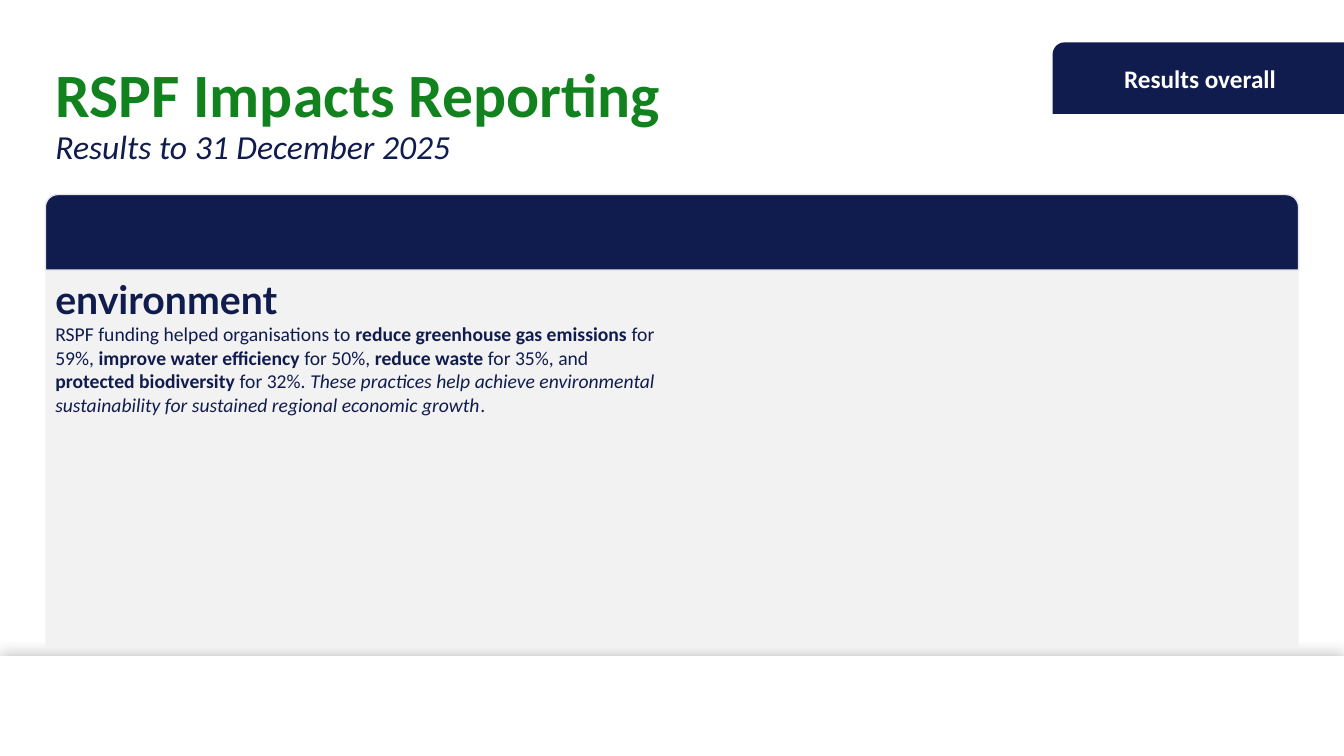
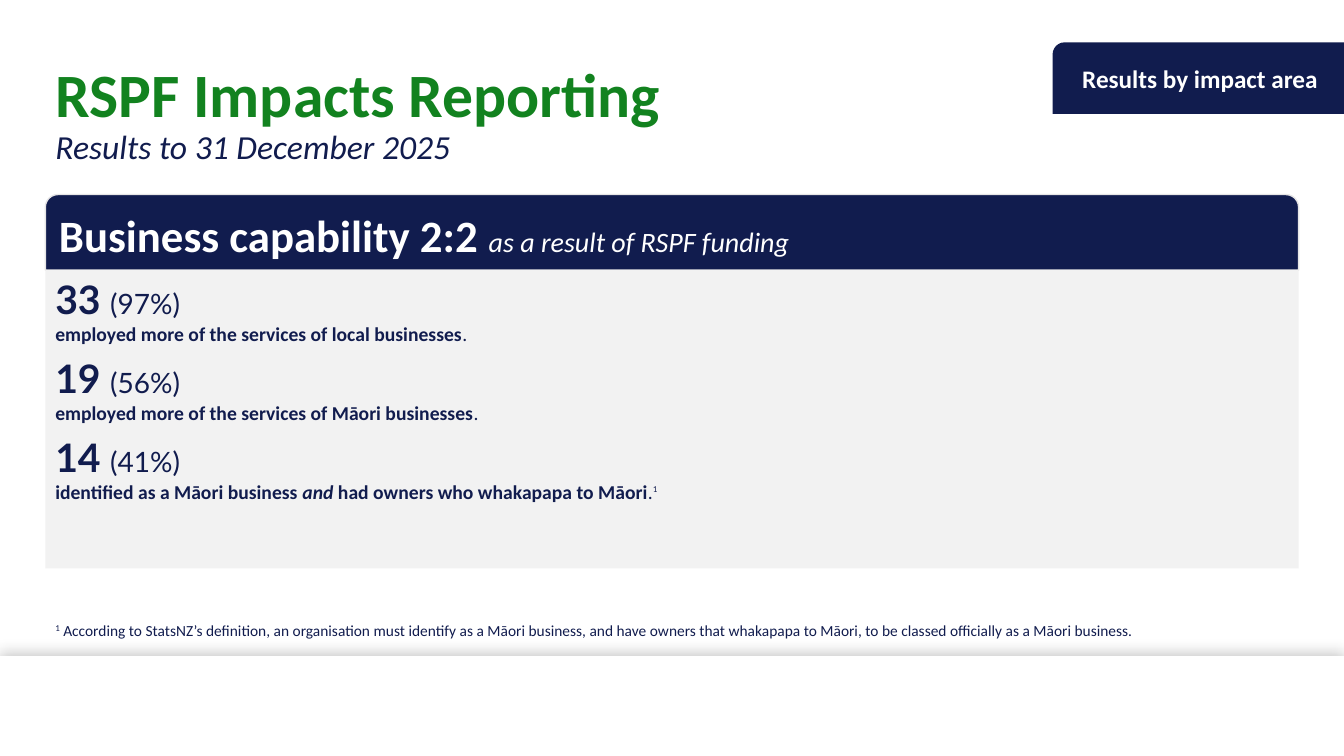
from lxml.etree import SubElement
from pptx import Presentation
from pptx.dml.color import RGBColor
from pptx.enum.shapes import MSO_SHAPE as SHAPE
from pptx.enum.text import MSO_ANCHOR as ANCHOR, MSO_AUTO_SIZE as AUTO_SIZE, PP_ALIGN as ALIGN
from pptx.oxml.ns import qn
from pptx.util import Inches, Pt

COLORS = {"navy": "111C4E", "green": "12821F", "panel": "F2F2F2",
          "edge": "E7E6E6", "white": "FFFFFF", "shadow": "000000"}
BODY_FONT, NUMBER_FONT = "Calibri", "Lato"

SLIDE_W, SLIDE_H = 13.33, 7.5
MARGIN = 0.45
CONTENT_W = SLIDE_W - 2 * MARGIN
COLUMN_W = CONTENT_W / 2
TOP = 0.42
TITLE_H = 1.45
TAB_W, TAB_H = 2.89, 0.71
HEADER_TOP, HEADER_H = 1.93, 0.75
PANEL_TOP = HEADER_TOP + HEADER_H
BAND_TOP = 6.51

BOLD = {"bold": True}
ITALIC = {"italic": True}
HEADING = {"size": 28, "font": NUMBER_FONT, "bold": True}
SHARE = {"size": 20, "font": NUMBER_FONT}


def rgb(name):
    return RGBColor.from_string(COLORS[name])


def place(shape, left, top, width, height):
    shape.left, shape.top = Inches(left), Inches(top)
    shape.width, shape.height = Inches(width), Inches(height)


def add_run(paragraph, text, size=14, font=BODY_FONT, color="navy",
            bold=False, italic=False, baseline=0):
    """Add one run; baseline is its rise in percent."""
    run = paragraph.add_run()
    run.text = text
    run.font.size, run.font.name = Pt(size), font
    run.font.bold, run.font.italic = bold, italic
    run.font.color.rgb = rgb(color)
    if baseline:
        run.font.language_id = None
        run._r.get_or_add_rPr().set("baseline", str(baseline * 1000))


def write(shape, paragraphs, anchor=ANCHOR.MIDDLE, align=ALIGN.LEFT,
          line_spacing=None, space_after=(), **base):
    """Fill a shape with paragraphs, each a list of (text, format) runs."""
    frame = shape.text_frame
    frame.word_wrap = True
    frame.vertical_anchor = anchor
    for index, runs in enumerate(paragraphs):
        paragraph = frame.add_paragraph() if index else frame.paragraphs[0]
        paragraph.alignment = align
        if line_spacing:
            paragraph.line_spacing = line_spacing
        if space_after:
            paragraph.space_after = Pt(space_after[index % len(space_after)])
        for text, style in runs:
            if text == "\n":
                paragraph.add_line_break()
            else:
                add_run(paragraph, text, **{**base, **style})


def add_block(slide, kind, left, top, width, height, fill, line=None):
    block = slide.shapes.add_shape(kind, Inches(left), Inches(top),
                                   Inches(width), Inches(height))
    block.shadow.inherit = False
    block.fill.solid()
    block.fill.fore_color.rgb = rgb(fill)
    if line:
        block.line.color.rgb = rgb(line)
        block.line.width = Pt(1)
    else:
        block.line.fill.background()
    return block


def add_footer_band(slide):
    """Draw the shadowed band and move it to the layout that all slides share."""
    band = add_block(slide, SHAPE.RECTANGLE, 0, BAND_TOP, SLIDE_W,
                     SLIDE_H - BAND_TOP, "white")
    effects = band.element.spPr.find(qn("a:effectLst"))
    shadow = SubElement(effects, qn("a:outerShdw"), blurRad=str(Pt(10)),
                        dist=str(Pt(3)), dir=str(270 * 60000), rotWithShape="0")
    color = SubElement(shadow, qn("a:srgbClr"), val=COLORS["shadow"])
    SubElement(color, qn("a:alpha"), val="20000")
    slide.slide_layout.shapes.element.append(band.element)


def add_title(slide, width):
    title = slide.shapes.title
    place(title, MARGIN, TOP, width, TITLE_H)
    title.text_frame.auto_size = AUTO_SIZE.NONE
    write(title, [[("RSPF Impacts Reporting", {"size": 44, "color": "green", **BOLD}),
                   ("\n", {}),
                   ("Results to 31 December 2025", {"size": 24, **ITALIC})]],
          line_spacing=0.9)


def add_tab(slide, label):
    tab = add_block(slide, SHAPE.ROUND_1_RECTANGLE, SLIDE_W - TAB_W, TOP,
                    TAB_W, TAB_H, "navy")
    tab.element.spPr.find(qn("a:xfrm")).set("flipH", "1")
    write(tab, [[(label, BOLD)]], align=ALIGN.CENTER, size=18, color="white")


def add_header(slide, *runs):
    header = add_block(slide, SHAPE.ROUND_2_SAME_RECTANGLE, MARGIN, HEADER_TOP,
                       CONTENT_W, HEADER_H, "navy", line="edge")
    if runs:
        write(header, [runs], color="white")


def add_panel(slide, left, width, height, paragraphs=(), **style):
    panel = add_block(slide, SHAPE.RECTANGLE, left, PANEL_TOP, width, height, "panel")
    if paragraphs:
        write(panel, paragraphs, anchor=ANCHOR.TOP, **style)


def add_footnote(slide, mark, text):
    note = slide.shapes.add_textbox(Inches(MARGIN), Inches(6.11),
                                    Inches(CONTENT_W), Inches(0.29))
    note.text_frame.auto_size = AUTO_SIZE.SHAPE_TO_FIT_TEXT
    write(note, [[(mark, {"baseline": 30}), (text, {})]], anchor=ANCHOR.TOP, size=11)


def stat(count, share, *statement):
    """Two paragraphs: the figures, then what they count."""
    return [[(f"{count} ", HEADING), (f"({share})", SHARE)], list(statement)]


def build_overall(slide):
    add_title(slide, 8.5)
    environment = [
        [("environment", HEADING)],
        [("RSPF funding helped organisations to ", {}),
         ("reduce greenhouse gas emissions ", BOLD), ("for 59%, ", {}),
         ("improve water efficiency ", BOLD), ("for 50%, ", {}),
         ("reduce waste ", BOLD), ("for 35%, and ", {}),
         ("protected biodiversity ", BOLD), ("for 32%. ", {}),
         ("These practices help achieve environmental sustainability "
          "for sustained regional economic growth", ITALIC), (".", {})],
    ]
    for column, paragraphs in enumerate((environment, ())):
        add_panel(slide, MARGIN + column * COLUMN_W, COLUMN_W, 3.75, paragraphs)
    add_header(slide)
    add_tab(slide, "Results overall")


def build_capability(slide):
    add_title(slide, CONTENT_W)
    add_header(slide, ("Business capability 2:2 ", {"size": 32, **BOLD}),
               ("as a result of RSPF funding", {"size": 20, **ITALIC}))
    add_tab(slide, "Results by impact area")
    stop = (".", {})
    stats = [
        *stat(33, "97%", ("employed more of the services of local businesses", BOLD), stop),
        *stat(19, "56%", ("employed more of the services of Māori businesses", BOLD), stop),
        *stat(14, "41%", ("identified as a Māori business ", BOLD),
              ("and", {**BOLD, **ITALIC}),
              (" had owners who whakapapa to Māori", BOLD), stop,
              ("1", {"size": 11, "baseline": 50})),
    ]
    add_panel(slide, MARGIN, CONTENT_W, 2.96, stats, space_after=(0, 6))
    add_footnote(slide, "1", " According to StatsNZ’s definition, an organisation must "
                 "identify as a Māori business, and have owners that whakapapa to Māori, "
                 "to be classed officially as a Māori business.")


def main():
    deck = Presentation()
    deck.slide_width, deck.slide_height = Inches(SLIDE_W), Inches(SLIDE_H)
    title_only = deck.slide_layouts[5]
    overall, capability = (deck.slides.add_slide(title_only) for _ in range(2))
    add_footer_band(overall)
    build_overall(overall)
    build_capability(capability)
    deck.save("out.pptx")


if __name__ == "__main__":
    main()
